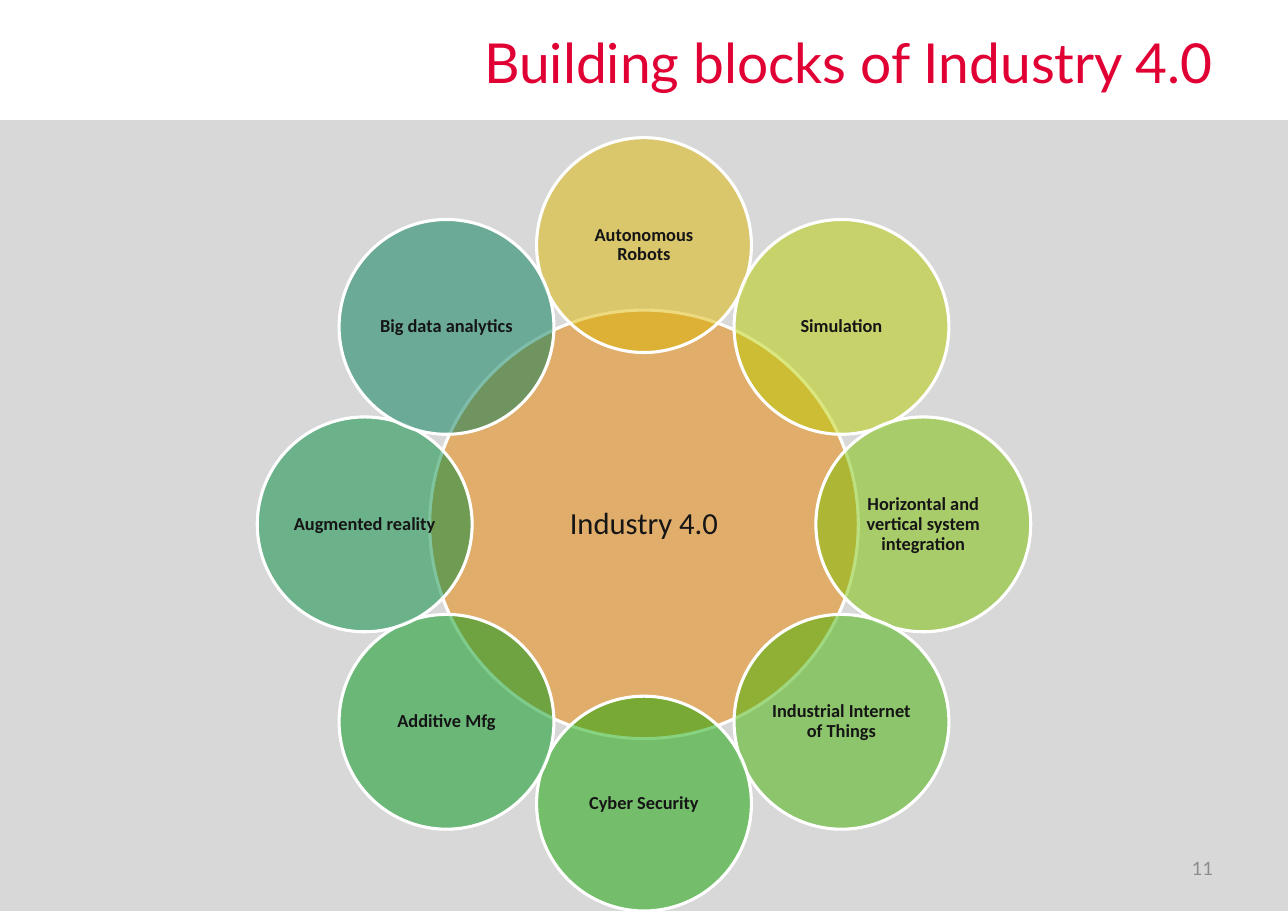
from math import cos, radians, sin

from lxml import etree
from pptx import Presentation
from pptx.dml.color import RGBColor
from pptx.enum.shapes import MSO_SHAPE as Shape
from pptx.enum.text import MSO_ANCHOR as Anchor, PP_ALIGN as Align
from pptx.oxml.ns import qn
from pptx.util import Inches, Pt

COLORS = {
    "band": "D8D8D8",
    "title": "E00034",
    "number": "8C8C8C",
    "text": "151515",
    "outline": "FFFFFF",
    "hub": "E98300",
}
BLOCKS = [
    ("Autonomous Robots", "DCB600"),
    ("Simulation", "BACE00"),
    ("Horizontal and vertical system integration", "7BC100"),
    ("Industrial Internet of Things", "42B300"),
    ("Cyber Security", "11A600"),
    ("Additive Mfg", "009819"),
    ("Augmented reality", "008B3B"),
    ("Big data analytics", "007D57"),
]
CENTER_X, CENTER_Y = 5.845, 4.76
RING_RADIUS = 2.535
HUB_SIZE, BLOCK_SIZE = 3.89, 1.95


def write_text(shape, text, size, color, font="Lato", align=Align.RIGHT, bold=False, spacing=1.0, inset=None):
    frame = shape.text_frame
    frame.word_wrap = True
    frame.vertical_anchor = Anchor.MIDDLE
    if inset is not None:
        frame.margin_left = frame.margin_right = Inches(inset)
        frame.margin_top = frame.margin_bottom = Inches(inset)
    paragraph = frame.paragraphs[0]
    paragraph.alignment = align
    paragraph.line_spacing = spacing
    run = paragraph.add_run()
    run.text = text
    run.font.name = font
    run.font.size = Pt(size)
    run.font.bold = bold
    run.font.color.rgb = RGBColor.from_string(color)


def add_circle(slide, x, y, size, color):
    circle = slide.shapes.add_shape(
        Shape.OVAL, Inches(x - size / 2), Inches(y - size / 2), Inches(size), Inches(size))
    circle.shadow.inherit = False
    circle.fill.solid()
    circle.fill.fore_color.rgb = RGBColor.from_string(color)
    fill_color = circle._element.spPr.find(qn("a:solidFill"))[0]
    etree.SubElement(fill_color, qn("a:alpha"), val="50000")
    circle.line.color.rgb = RGBColor.from_string(COLORS["outline"])
    circle.line.width = Pt(2)
    return circle


presentation = Presentation()
presentation.slide_width = Inches(11.69)
presentation.slide_height = Inches(8.27)
slide = presentation.slides.add_slide(presentation.slide_layouts[5])

title = slide.shapes.title
title.left, title.top = Inches(2.99), Inches(0.2)
title.width, title.height = Inches(8.12), Inches(0.72)
write_text(title, "Building blocks of Industry 4.0", 36, COLORS["title"])

band = slide.shapes.add_shape(Shape.RECTANGLE, 0, Inches(1.09), Inches(11.69), Inches(7.18))
band.shadow.inherit = False
band.fill.solid()
band.fill.fore_color.rgb = RGBColor.from_string(COLORS["band"])
band.line.fill.background()

number = slide.shapes.add_textbox(Inches(8.38), Inches(7.66), Inches(2.73), Inches(0.44))
write_text(number, "11", 12, COLORS["number"])

hub = add_circle(slide, CENTER_X, CENTER_Y, HUB_SIZE, COLORS["hub"])
write_text(hub, "Industry 4.0", 20, COLORS["text"], font="Calibri", align=Align.CENTER,
           spacing=0.9, inset=0.03)

for index, (label, color) in enumerate(BLOCKS):
    angle = radians(index * 360 / len(BLOCKS))
    x = CENTER_X + RING_RADIUS * sin(angle)
    y = CENTER_Y - RING_RADIUS * cos(angle)
    block = add_circle(slide, x, y, BLOCK_SIZE, color)
    write_text(block, label, 12, COLORS["text"], font="Calibri", align=Align.CENTER,
               bold=True, spacing=0.9, inset=0.02)

presentation.save("out.pptx")
